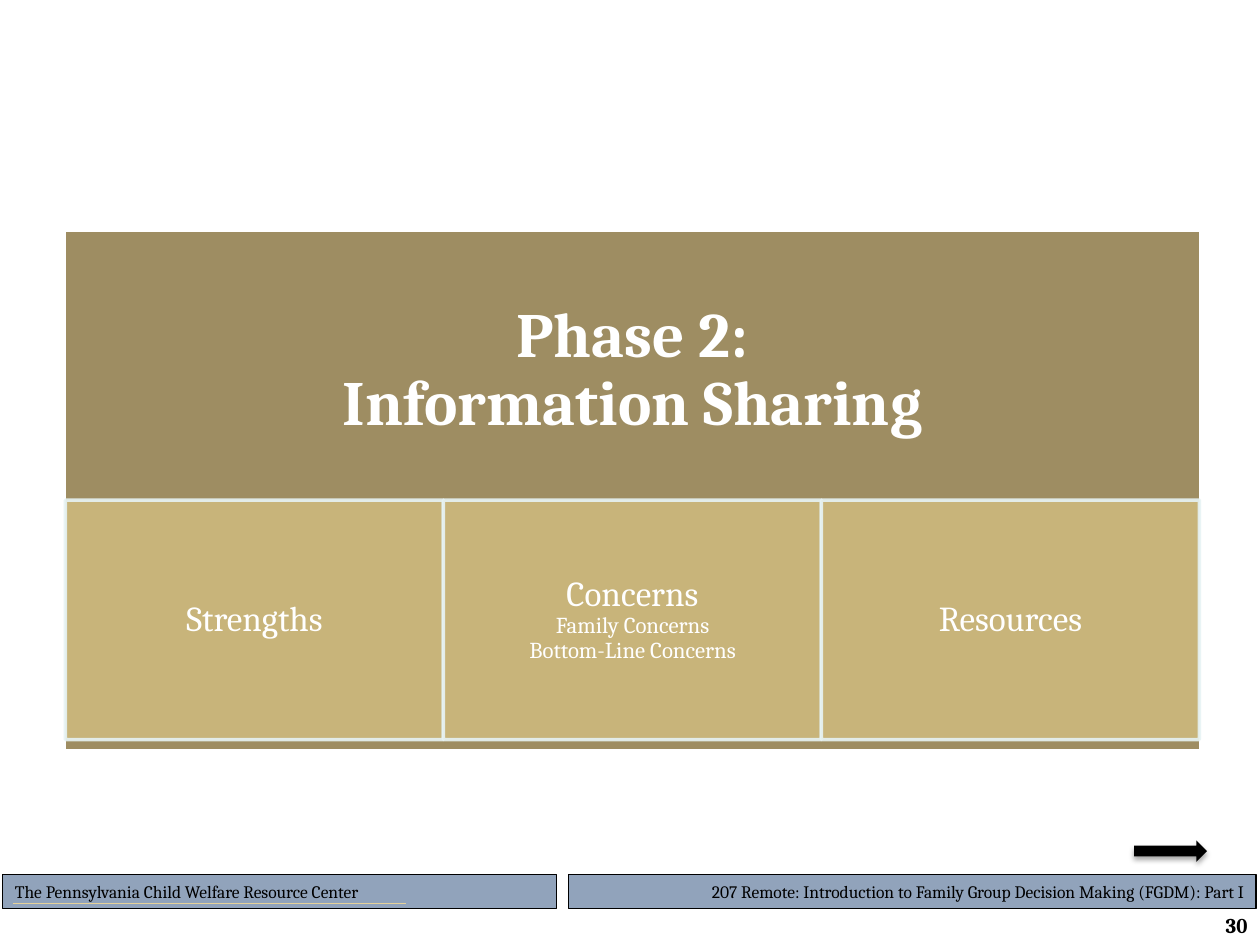
from dataclasses import dataclass

from lxml import etree
from pptx import Presentation
from pptx import util as u
from pptx.dml.color import RGBColor
from pptx.enum import shapes, text
from pptx.oxml import ns

FONT = "Cambria"
BLACK, WHITE = "000000", "FFFFFF"
GOLD, SAND, ICE, SLATE = "948151", "CDB97D", "E7F3F4", "91A3BB"
LEFT, RIGHT, CENTER = text.PP_ALIGN.LEFT, text.PP_ALIGN.RIGHT, text.PP_ALIGN.CENTER
CELL_LEFT, CELL_TOP, CELL_WIDTH, CELL_HEIGHT = 0.52, 3.97, 3.0, 1.9


@dataclass
class Box:
    left: float
    top: float
    width: float
    height: float


@dataclass
class Line:
    words: str
    size: float
    bold: bool = False


@dataclass
class Footer:
    box: Box
    words: str
    align: text.PP_ALIGN
    line_width: float


FOOTERS = [
    Footer(Box(4.51, 6.94, 5.46, 0.27),
           "207 Remote: Introduction to Family Group Decision Making (FGDM): Part I", RIGHT, 0.75),
    Footer(Box(0.02, 6.94, 4.4, 0.27),
           "The Pennsylvania Child Welfare Resource Center", LEFT, 0.5),
]
TOPICS = [
    [Line("Strengths", 20)],
    [Line("Concerns", 20), Line("Family Concerns", 13), Line("Bottom-Line Concerns", 13)],
    [Line("Resources", 20)],
]


def rgb(color: str) -> RGBColor:
    return RGBColor.from_string(color)


def place(shape, box: Box) -> None:
    shape.left, shape.top = u.Inches(box.left), u.Inches(box.top)
    shape.width, shape.height = u.Inches(box.width), u.Inches(box.height)


def set_alpha(color_format_parent, percent: int) -> None:
    """Make the solid colour inside a spPr or ln element partly transparent."""
    color = color_format_parent.find(ns.qn("a:solidFill"))[0]
    etree.SubElement(color, ns.qn("a:alpha"), val=str(percent * 1000))


def add_block(slide, box: Box, fill: str, line: str | None = None, line_width: float = 0,
              kind=shapes.MSO_SHAPE.RECTANGLE):
    shape = slide.shapes.add_shape(kind, 0, 0, 0, 0)
    place(shape, box)
    shape.shadow.inherit = False
    shape.fill.solid()
    shape.fill.fore_color.rgb = rgb(fill)
    if line:
        shape.line.color.rgb = rgb(line)
        shape.line.width = u.Pt(line_width)
    else:
        shape.line.fill.background()
    return shape


def write(shape, lines: list[Line], color: str, align: text.PP_ALIGN,
          margins: tuple[float, float] = (0.1, 0.05), spacing: float = 1.0) -> None:
    frame = shape.text_frame
    frame.word_wrap = True
    frame.auto_size = text.MSO_AUTO_SIZE.NONE
    frame.vertical_anchor = text.MSO_ANCHOR.MIDDLE
    frame.margin_left = frame.margin_right = u.Inches(margins[0])
    frame.margin_top = frame.margin_bottom = u.Inches(margins[1])
    for index, line in enumerate(lines):
        paragraph = frame.add_paragraph() if index else frame.paragraphs[0]
        paragraph.text = line.words
        paragraph.alignment = align
        paragraph.line_spacing = spacing
        paragraph.font.name = FONT
        paragraph.font.size = u.Pt(line.size)
        paragraph.font.bold = line.bold
        paragraph.font.color.rgb = rgb(color)


def add_footers(slide) -> None:
    for footer in FOOTERS:
        bar = add_block(slide, footer.box, SLATE, BLACK, footer.line_width)
        write(bar, [Line(footer.words, 10)], BLACK, footer.align)
    rule = slide.shapes.add_connector(shapes.MSO_CONNECTOR.STRAIGHT, u.Inches(0.1),
                                      u.Inches(7.17), u.Inches(3.22), u.Inches(7.17))
    rule.line.color.rgb = rgb("E5D199")
    rule.line.width = u.Pt(0.75)
    etree.SubElement(rule._element.spPr, ns.qn("a:effectLst"))
    number = slide.shapes.add_textbox(0, 0, 0, 0)
    place(number, Box(8.89, 7.24, 1.11, 0.21))
    write(number, [Line("30", 12, bold=True)], BLACK, RIGHT)


def add_phase(slide) -> None:
    panel = add_block(slide, Box(0.51, 1.83, 9.02, 4.13), GOLD, WHITE, 2)
    set_alpha(panel._element.spPr, 90)
    title = slide.shapes.title
    place(title, Box(0.51, 1.83, 9.02, 2.23))
    write(title, [Line("Phase 2:\vInformation Sharing", 36, bold=True)], WHITE, CENTER,
          (0.28, 0.28), 0.9)
    panel._element.addnext(title._element)  # bring the title in front of the panel
    for column, lines in enumerate(TOPICS):
        box = Box(CELL_LEFT + column * CELL_WIDTH, CELL_TOP, CELL_WIDTH, CELL_HEIGHT)
        cell = add_block(slide, box, SAND, ICE, 2)
        set_alpha(cell._element.spPr, 90)
        set_alpha(cell._element.spPr.find(ns.qn("a:ln")), 90)
        write(cell, lines, WHITE, CENTER, (0.16, 0.03), 0.9)


def add_next_arrow(slide) -> None:
    arrow = add_block(slide, Box(9, 6.67, 0.58, 0.17), BLACK,
                      kind=shapes.MSO_SHAPE.RIGHT_ARROW)
    effects = arrow._element.spPr.find(ns.qn("a:effectLst"))
    shadow = etree.SubElement(effects, ns.qn("a:outerShdw"), blurRad=str(u.Pt(3.1)),
                              dist=str(u.Pt(1.8)), dir="5400000", rotWithShape="0")
    color = etree.SubElement(shadow, ns.qn("a:srgbClr"), val=BLACK)
    etree.SubElement(color, ns.qn("a:alpha"), val="35000")


def main() -> None:
    presentation = Presentation()
    presentation.slide_width, presentation.slide_height = u.Inches(10), u.Inches(7.5)
    slide = presentation.slides.add_slide(presentation.slide_layouts[5])
    add_footers(slide)
    add_phase(slide)
    add_next_arrow(slide)
    presentation.save("out.pptx")


if __name__ == "__main__":
    main()
